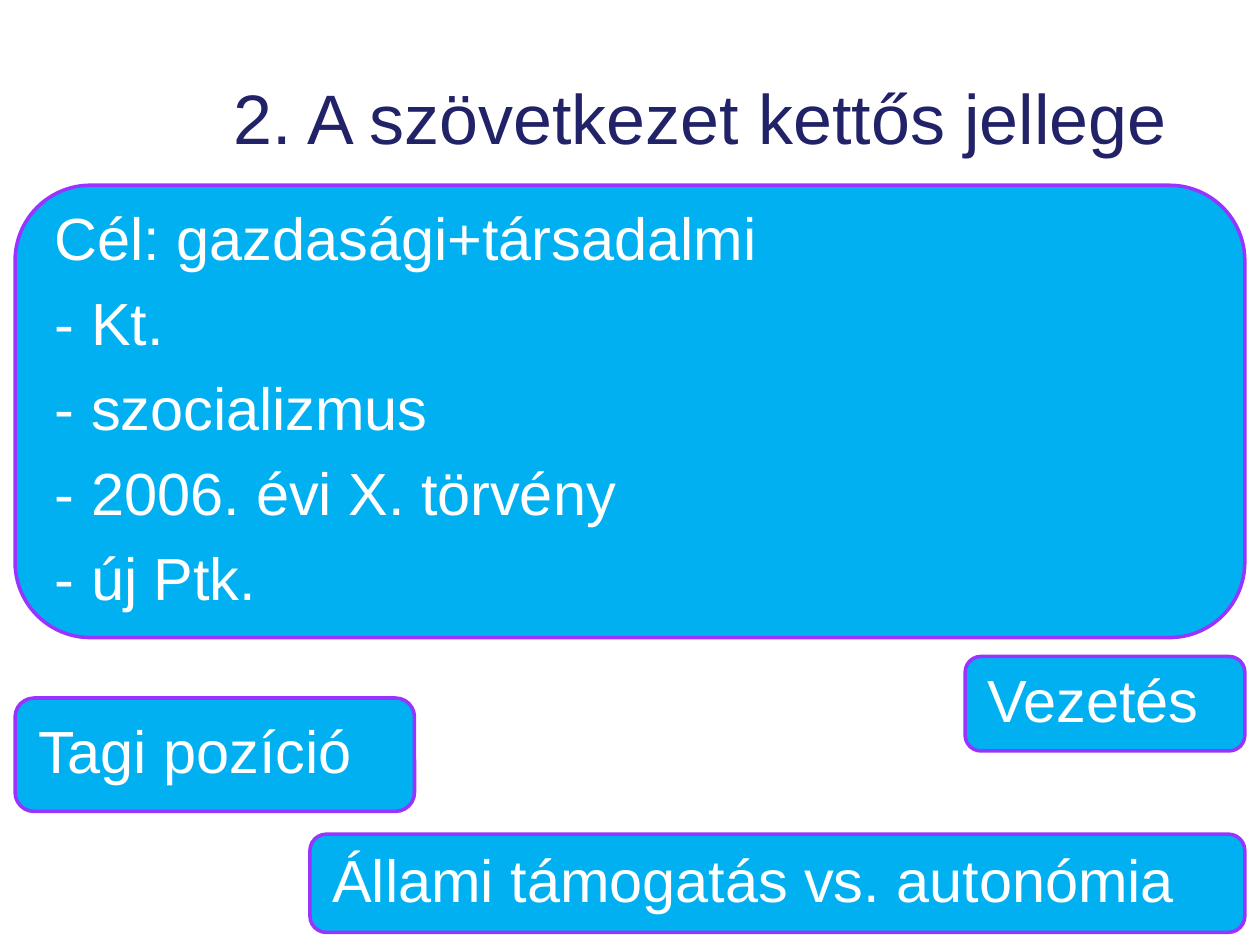
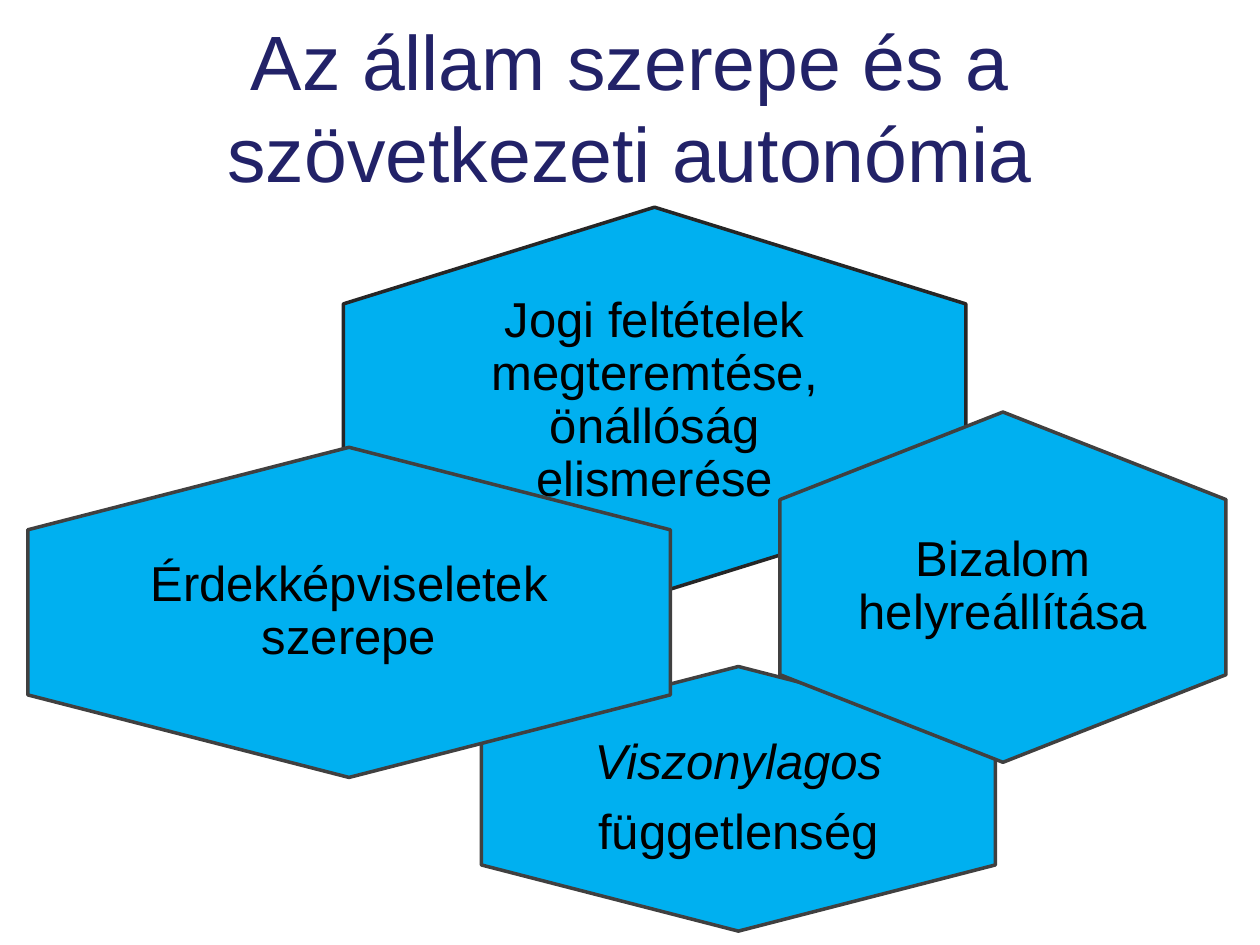
from pptx import Presentation
from pptx.dml.color import RGBColor
from pptx.enum.shapes import MSO_SHAPE
from pptx.enum.text import MSO_ANCHOR, MSO_AUTO_SIZE, PP_ALIGN
from pptx.util import Inches, Pt

ROUNDED = MSO_SHAPE.ROUNDED_RECTANGLE
HEXAGON = MSO_SHAPE.HEXAGON
MIDDLE = MSO_ANCHOR.MIDDLE
NO_FIT = MSO_AUTO_SIZE.NONE
LEFT, CENTER = PP_ALIGN.LEFT, PP_ALIGN.CENTER

COLORS = {
    "title": "222268",
    "fill": "00B0F0",
    "box_line": "9933FF",
    "hexagon_line": "404040",
    "top_hexagon_line": "262626",
    "light_text": "FFFFFF",
    "dark_text": "000000",
}
FONT = "Arial"
TITLE_ONLY = 5
COLUMNS, ROWS = 100, 75
TEXT_SHARE = 2 / 3


class Deck:
    def __init__(self):
        self.presentation = Presentation()
        self.presentation.slide_width = Inches(10)
        self.presentation.slide_height = Inches(7.5)
        self.column = self.presentation.slide_width / COLUMNS
        self.row = self.presentation.slide_height / ROWS
        self.slide = None

    def color(self, name):
        return RGBColor.from_string(COLORS[name])

    def place(self, box):
        left, top, width, height = box
        return (round(left * self.column), round(top * self.row),
                round(width * self.column), round(height * self.row))

    def add_lines(self, shape, lines, size, color, align, inset, gap=0.35, spacing=0.9):
        frame = shape.text_frame
        frame.word_wrap = True
        frame.auto_size = NO_FIT
        frame.vertical_anchor = MIDDLE
        frame.margin_left = frame.margin_right = Inches(inset[0])
        frame.margin_top = frame.margin_bottom = Inches(inset[1])
        for index, (text, italic) in enumerate(lines):
            paragraph = frame.paragraphs[0] if index == 0 else frame.add_paragraph()
            paragraph.alignment = align
            paragraph.line_spacing = spacing
            paragraph.space_before = Pt(0)
            paragraph.space_after = Pt(size * gap)
            run = paragraph.add_run()
            run.text = text
            run.font.name = FONT
            run.font.size = Pt(size)
            run.font.italic = italic
            run.font.color.rgb = self.color(color)

    def add_slide(self, title, box, size):
        layout = self.presentation.slide_layouts[TITLE_ONLY]
        self.slide = self.presentation.slides.add_slide(layout)
        shape = self.slide.shapes.title
        shape.left, shape.top, shape.width, shape.height = self.place(box)
        self.add_lines(shape, [(title, False)], size, "title", CENTER, (0.1, 0.05), 0, 1.0)

    def add_outline(self, kind, position, line):
        shape = self.slide.shapes.add_shape(kind, *position)
        shape.shadow.inherit = False
        shape.fill.solid()
        shape.fill.fore_color.rgb = self.color("fill")
        shape.line.color.rgb = self.color(line)
        shape.line.width = Pt(2)
        return shape

    def add_rounded_box(self, box, lines):
        shape = self.add_outline(ROUNDED, self.place(box), "box_line")
        self.add_lines(shape, [(line, False) for line in lines], 34,
                       "light_text", LEFT, (0.14, 0.14))

    def add_upright_hexagon(self, box, lines, inset, line="hexagon_line"):
        left, top, width, height = self.place(box)
        turn = (width - height) // 2
        shape = self.add_outline(HEXAGON, (left + turn, top - turn, height, width), line)
        shape.rotation = 90
        shape.adjustments[0] = 0.25
        margin = (1 - TEXT_SHARE) / 2
        label = self.slide.shapes.add_textbox(
            round(left + width * margin), round(top + height * margin),
            round(width * TEXT_SHARE), round(height * TEXT_SHARE))
        self.add_lines(label, lines, 28, "dark_text", CENTER, (inset, inset))


def build_dual_nature(deck):
    deck.add_slide("2. A szövetkezet kettős jellege", (13, 3, 85.1, 12.5), 40)
    deck.add_rounded_box((1.2, 14.7, 97.6, 35.9), [
        "Cél: gazdasági+társadalmi",
        "- Kt.",
        "- szocializmus",
        "- 2006. évi X. törvény",
        "- új Ptk.",
    ])
    deck.add_rounded_box((76.6, 52.1, 22.2, 7.5), ["Vezetés"])
    deck.add_rounded_box((1.2, 55.4, 31.7, 9), ["Tagi pozíció"])
    deck.add_rounded_box((24.6, 66.2, 74.2, 7.8), ["Állami támogatás vs. autonómia"])


def build_state_role(deck):
    deck.add_slide("Az állam szerepe és a szövetkezeti autonómia", (5, 1.3, 90, 14.2), 44)
    deck.add_upright_hexagon((38.2, 52.9, 40.8, 21),
                             [("Viszonylagos", True), ("függetlenség", False)], 0.12)
    deck.add_upright_hexagon((27.25, 16.45, 49.4, 30.7),
                             [("Jogi feltételek megteremtése, önállóság elismerése", False)],
                             0, "top_hexagon_line")
    deck.add_upright_hexagon((2.2, 35.5, 51, 26.2),
                             [("Érdekképviseletek szerepe", False)], 0.12)
    deck.add_upright_hexagon((61.9, 32.7, 35.4, 27.8),
                             [("Bizalom helyreállítása", False)], 0)


def main():
    deck = Deck()
    build_dual_nature(deck)
    build_state_role(deck)
    deck.presentation.save("out.pptx")


if __name__ == "__main__":
    main()
